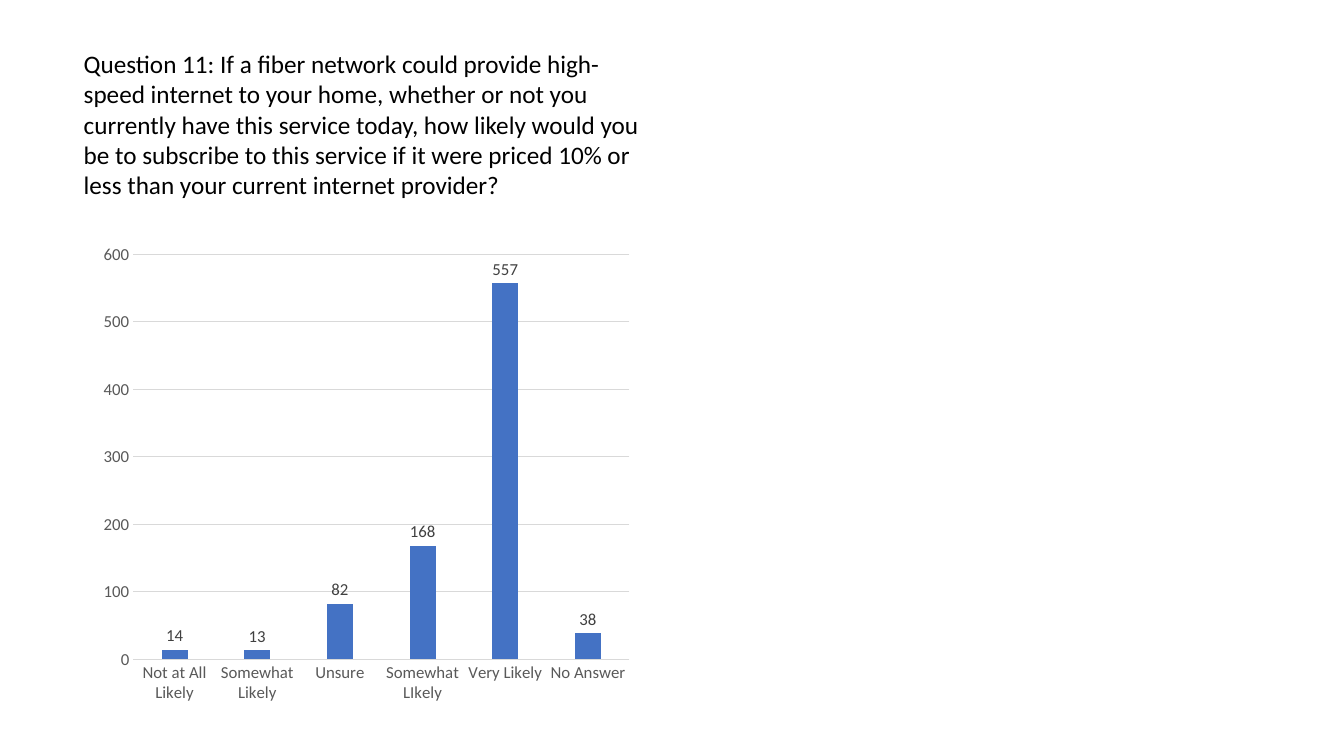
"""Build the slide charting how likely residents are to subscribe to fiber."""
from dataclasses import dataclass

from pptx import Presentation
from pptx.chart.data import CategoryChartData
from pptx.dml.color import RGBColor
from pptx.enum import chart as chart_enum, text as text_enum
from pptx.util import Inches, Pt


@dataclass(frozen=True)
class Theme:
    font: str = "Calibri"
    black: str = "000000"
    bar: str = "4472C4"
    axis_text: str = "595959"
    label_text: str = "404040"
    rule: str = "D9D9D9"
    question_size: int = 18
    chart_size: int = 12
    rule_width: float = 0.75


THEME = Theme()
QUESTION = (
    "Question 11: If a fiber network could provide high-speed internet to your home, "
    "whether or not you currently have this service today, how likely would you be to "
    "subscribe to this service if it were priced 10% or less than your current internet "
    "provider?"
)
ANSWERS = {
    "Not at All Likely": 14,
    "Somewhat Likely": 13,
    "Unsure": 82,
    "Somewhat LIkely": 168,
    "Very Likely": 557,
    "No Answer": 38,
}


def style_font(font, size, color):
    font.name = THEME.font
    font.size = Pt(size)
    font.bold = False
    font.color.rgb = RGBColor.from_string(color)


def style_rule(line):
    line.color.rgb = RGBColor.from_string(THEME.rule)
    line.width = Pt(THEME.rule_width)


def add_question(slide, wording, left, top, width, height):
    title = slide.shapes.title
    title.left, title.top = Inches(left), Inches(top)
    title.width, title.height = Inches(width), Inches(height)
    frame = title.text_frame
    frame.word_wrap = True
    frame.auto_size = text_enum.MSO_AUTO_SIZE.SHAPE_TO_FIT_TEXT
    frame.vertical_anchor = text_enum.MSO_ANCHOR.TOP
    paragraph = frame.paragraphs[0]
    paragraph.alignment = text_enum.PP_ALIGN.LEFT
    run = paragraph.add_run()
    run.text = wording
    style_font(run.font, THEME.question_size, THEME.black)


def style_axis(axis):
    axis.major_tick_mark = chart_enum.XL_TICK_MARK.NONE
    axis.minor_tick_mark = chart_enum.XL_TICK_MARK.NONE
    style_font(axis.tick_labels.font, THEME.chart_size, THEME.axis_text)


def add_answer_chart(slide, answers, left, top, width, height):
    data = CategoryChartData()
    data.categories = list(answers)
    data.add_series("Series 1", list(answers.values()))
    chart = slide.shapes.add_chart(
        chart_enum.XL_CHART_TYPE.COLUMN_CLUSTERED,
        Inches(left), Inches(top), Inches(width), Inches(height), data,
    ).chart
    style_font(chart.font, THEME.chart_size, THEME.axis_text)
    chart.has_legend = False
    chart.has_title = False

    style_axis(chart.category_axis)
    style_rule(chart.category_axis.format.line)
    style_axis(chart.value_axis)
    chart.value_axis.format.line.fill.background()
    chart.value_axis.minimum_scale = 0
    chart.value_axis.maximum_scale = 600
    chart.value_axis.major_unit = 100
    style_rule(chart.value_axis.major_gridlines.format.line)

    plot = chart.plots[0]
    plot.gap_width = 219
    plot.vary_by_categories = False
    series = plot.series[0]
    series.format.fill.solid()
    series.format.fill.fore_color.rgb = RGBColor.from_string(THEME.bar)
    labels = series.data_labels
    labels.show_value = True
    labels.position = chart_enum.XL_LABEL_POSITION.OUTSIDE_END
    style_font(labels.font, THEME.chart_size, THEME.label_text)


def main():
    presentation = Presentation()
    presentation.slide_width = Inches(13.33)
    presentation.slide_height = Inches(7.5)
    title_only = presentation.slide_layouts.get_by_name("Title Only")
    slide = presentation.slides.add_slide(title_only)
    add_answer_chart(slide, ANSWERS, 0.92, 2.33, 5.43, 4.74)
    add_question(slide, QUESTION, 0.73, 0.43, 5.72, 1.62)
    presentation.save("out.pptx")


if __name__ == "__main__":
    main()
